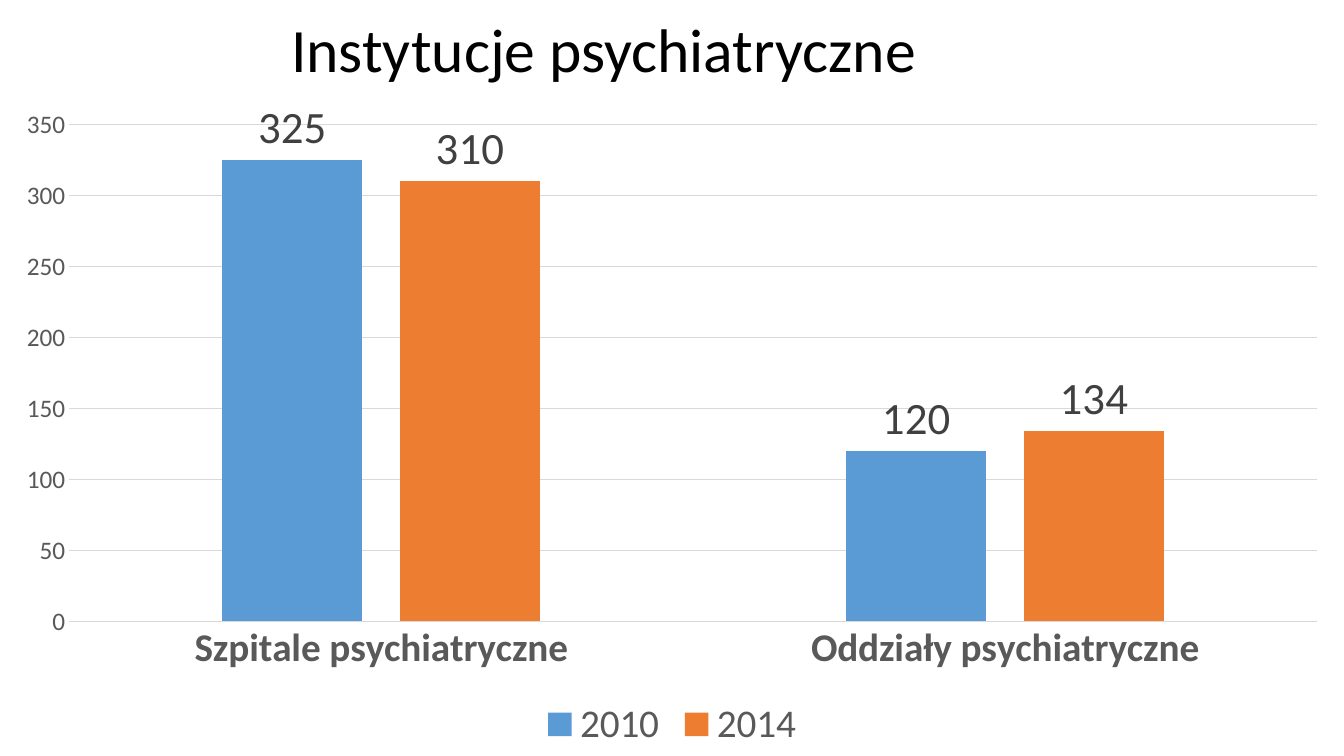
from dataclasses import dataclass

from pptx import Presentation
from pptx.chart.data import CategoryChartData as ChartData
from pptx.dml.color import RGBColor as Rgb
from pptx.enum.chart import XL_CHART_TYPE as Kind
from pptx.enum.chart import XL_LABEL_POSITION as LabelPos
from pptx.enum.chart import XL_LEGEND_POSITION as LegendPos
from pptx.enum.chart import XL_TICK_MARK as Tick
from pptx.enum.text import MSO_ANCHOR as Anchor
from pptx.enum.text import PP_ALIGN as Align
from pptx.util import Inches, Pt

WIDTH, HEIGHT, HEAD = 13.33, 7.5, 0.95
YEARS = {"2010": (325, 120), "2014": (310, 134)}
PLACES = ("Szpitale psychiatryczne", "Oddziały psychiatryczne")


@dataclass(frozen=True)
class Theme:
    face: str = "Calibri"
    ink: str = "000000"
    gray: str = "595959"
    dark: str = "404040"
    rule: str = "D9D9D9"
    bars: tuple = ("5B9BD5", "ED7D31")
    title: int = 44
    value: int = 32
    label: int = 28
    scale: int = 18
    base: int = 10
    hair: float = 0.75


class Page:
    def __init__(self, slide, theme):
        self.slide, self.theme = slide, theme

    def font(self, font, size, color, bold=False):
        font.name, font.size, font.bold = self.theme.face, Pt(size), bold
        font.color.rgb = Rgb.from_string(color)

    def rule(self, line):
        line.width = Pt(self.theme.hair)
        line.color.rgb = Rgb.from_string(self.theme.rule)

    def title(self, text, left, top, width, height):
        box = self.slide.shapes.title
        box.left, box.top = Inches(left), Inches(top)
        box.width, box.height = Inches(width), Inches(height)
        frame = box.text_frame
        frame.text = text
        frame.vertical_anchor = Anchor.MIDDLE
        para = frame.paragraphs[0]
        para.alignment = Align.CENTER
        self.font(para.runs[0].font, self.theme.title, self.theme.ink)

    def columns(self, cats, rows, left, top, width, height):
        theme = self.theme
        data = ChartData()
        data.categories = cats
        for name, vals in rows.items():
            data.add_series(name, vals)
        chart = self.slide.shapes.add_chart(
            Kind.COLUMN_CLUSTERED, Inches(left), Inches(top),
            Inches(width), Inches(height), data).chart
        chart.has_title = False
        self.font(chart.font, theme.base, theme.ink)
        self.axes(chart)
        self.legend(chart)
        plot = chart.plots[0]
        plot.gap_width, plot.overlap = 219, -27
        plot.vary_by_categories = False
        for series, color in zip(plot.series, theme.bars):
            self.bars(series, color)

    def axes(self, chart):
        theme = self.theme
        cat, val = chart.category_axis, chart.value_axis
        for axis in (cat, val):
            axis.major_tick_mark = axis.minor_tick_mark = Tick.NONE
        self.font(cat.tick_labels.font, theme.label, theme.gray, True)
        self.font(val.tick_labels.font, theme.scale, theme.gray)
        self.rule(cat.format.line)
        val.format.line.fill.background()
        val.has_major_gridlines = True
        self.rule(val.major_gridlines.format.line)
        val.minimum_scale, val.maximum_scale, val.major_unit = 0, 350, 50

    def legend(self, chart):
        chart.has_legend = True
        chart.legend.position = LegendPos.BOTTOM
        chart.legend.include_in_layout = False
        self.font(chart.legend.font, self.theme.label, self.theme.gray)

    def bars(self, series, color):
        series.format.fill.solid()
        series.format.fill.fore_color.rgb = Rgb.from_string(color)
        series.invert_if_negative = False
        labels = series.data_labels
        labels.show_value = True
        labels.position = LabelPos.OUTSIDE_END
        self.font(labels.font, self.theme.value, self.theme.dark)


def main():
    deck = Presentation()
    deck.slide_width, deck.slide_height = Inches(WIDTH), Inches(HEIGHT)
    page = Page(deck.slides.add_slide(deck.slide_layouts[5]), Theme())
    page.title("Instytucje psychiatryczne", 0, 0, 11.98, HEAD)
    page.columns(PLACES, YEARS, 0, HEAD, WIDTH, HEIGHT - HEAD)
    deck.save("out.pptx")


if __name__ == "__main__":
    main()
